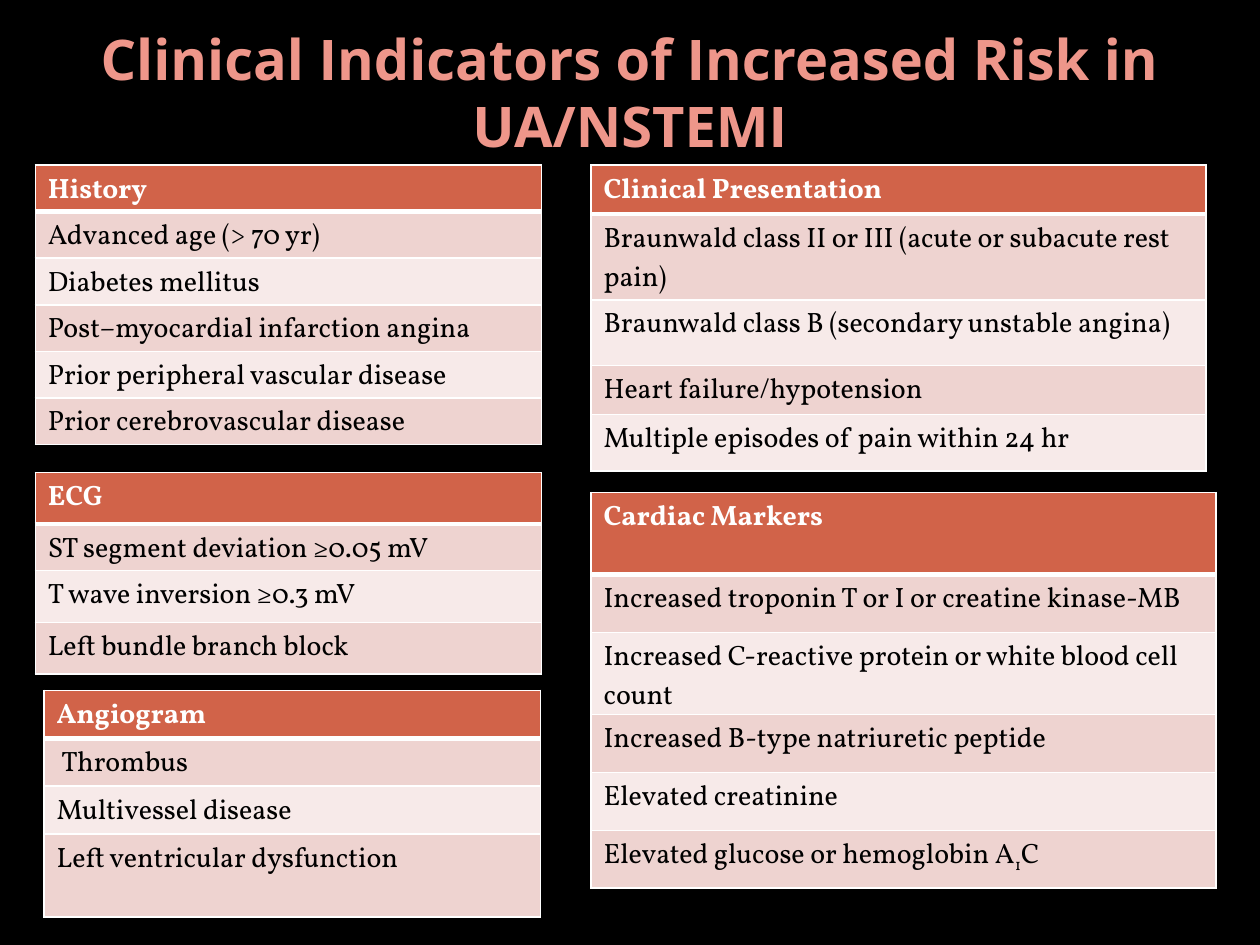
"""Build a slide of five risk-indicator tables for UA/NSTEMI."""
import pptx
import pptx.util
import pptx.dml.color
import pptx.enum.text
import pptx.oxml
import pptx.oxml.ns

Inches = pptx.util.Inches
Pt = pptx.util.Pt

TITLE = "Clinical Indicators of Increased Risk in UA/NSTEMI"
LEFT, RIGHT = 0.28, 4.69
TABLES = [
    {"at": (LEFT, 1.31), "wide": 4.02, "rows": [
        ("History", 0.37),
        ("Advanced age (> 70 yr)", 0.37),
        ("Diabetes mellitus", 0.37),
        ("Post–myocardial infarction angina", 0.37),
        ("Prior peripheral vascular disease", 0.37),
        ("Prior cerebrovascular disease", 0.37)]},
    {"at": (RIGHT, 1.31), "wide": 4.88, "rows": [
        ("Clinical Presentation", 0.39),
        ("Braunwald class II or III (acute or subacute rest pain)", 0.68),
        ("Braunwald class B (secondary unstable angina)", 0.52),
        ("Heart failure/hypotension", 0.39),
        ("Multiple episodes of pain within 24 hr", 0.45)]},
    {"at": (LEFT, 3.75), "wide": 4.02, "rows": [
        ("ECG", 0.41),
        ("ST segment deviation ≥0.05 mV", 0.37),
        ("T wave inversion ≥0.3 mV", 0.41),
        ("Left bundle branch block", 0.41)]},
    {"at": (0.35, 5.48), "wide": 3.94, "rows": [
        ("Angiogram", 0.38),
        (" Thrombus", 0.38),
        ("Multivessel disease", 0.38),
        ("Left ventricular dysfunction", 0.66)]},
    {"at": (RIGHT, 3.91), "wide": 4.96, "rows": [
        ("Cardiac Markers", 0.65),
        ("Increased troponin T or I or creatine kinase-MB", 0.46),
        ("Increased C-reactive protein or white blood cell count", 0.65),
        ("Increased B-type natriuretic peptide", 0.46),
        ("Elevated creatinine", 0.46),
        (("Elevated glucose or hemoglobin A", "1", "C"), 0.46)]},
]
THEME = {
    "back": "000000", "head": "D16349", "bands": ("F7EAE9", "EED3D0"),
    "line": "FFFFFF", "thin": 1, "thick": 3,
    "title": {"name": "Open Sans", "size": Pt(32), "bold": True, "color": "EE968A"},
    "label": {"name": "Vollkorn", "size": Pt(16), "bold": True, "color": "FFFFFF"},
    "body": {"name": "Vollkorn", "size": Pt(16), "bold": False, "color": "000000"},
}


def paint(fill, color):
    """Give a fill one solid colour."""
    fill.solid()
    fill.fore_color.rgb = pptx.dml.color.RGBColor.from_string(color)


def style(font, form):
    """Set font attributes from a dict of format values."""
    for key, value in form.items():
        if key == "color":
            paint(font.fill, value)
        else:
            setattr(font, key, value)


def write(para, text, form):
    """Write text, lowering every second part of a tuple."""
    parts = (text,) if isinstance(text, str) else text
    for i, part in enumerate(parts):
        run = para.add_run()
        run.text = part
        style(run.font, form)
        if i % 2:
            run._r.get_or_add_rPr().set("baseline", "-25000")


def border(cell, row):
    """Draw the four cell edges, thick between header and body."""
    props = cell._tc.get_or_add_tcPr()
    for i, side in enumerate("LRTB"):
        bold = (row, side) in ((0, "B"), (1, "T"))
        width = Pt(THEME["thick" if bold else "thin"])
        props.insert(i, pptx.oxml.parse_xml(
            f'<a:ln{side} {pptx.oxml.ns.nsdecls("a")} w="{width}"><a:solidFill>'
            f'<a:srgbClr val="{THEME["line"]}"/></a:solidFill></a:ln{side}>'))


def grid(slide, data):
    """Add one single-column table."""
    rows = data["rows"]
    high = sum(size for _, size in rows)
    box = [Inches(n) for n in (*data["at"], data["wide"], high)]
    table = slide.shapes.add_table(len(rows), 1, *box).table
    for i, (text, size) in enumerate(rows):
        table.rows[i].height = Inches(size)
        cell = table.cell(i, 0)
        paint(cell.fill, THEME["bands"][i % 2] if i else THEME["head"])
        border(cell, i)
        write(cell.text_frame.paragraphs[0], text, THEME["body" if i else "label"])


def title(slide):
    """Add the centred slide title."""
    box = [Inches(n) for n in (0.5, 0.3, 9, 0.85)]
    frame = slide.shapes.add_textbox(*box).text_frame
    frame.word_wrap = True
    frame.vertical_anchor = pptx.enum.text.MSO_ANCHOR.MIDDLE
    para = frame.paragraphs[0]
    para.alignment = pptx.enum.text.PP_ALIGN.CENTER
    write(para, TITLE, THEME["title"])


def main():
    """Build and save the deck."""
    deck = pptx.Presentation()
    deck.slide_width, deck.slide_height = Inches(10), Inches(7.5)
    slide = deck.slides.add_slide(deck.slide_layouts[6])
    paint(slide.background.fill, THEME["back"])
    title(slide)
    for data in TABLES:
        grid(slide, data)
    deck.save("out.pptx")


if __name__ == "__main__":
    main()
